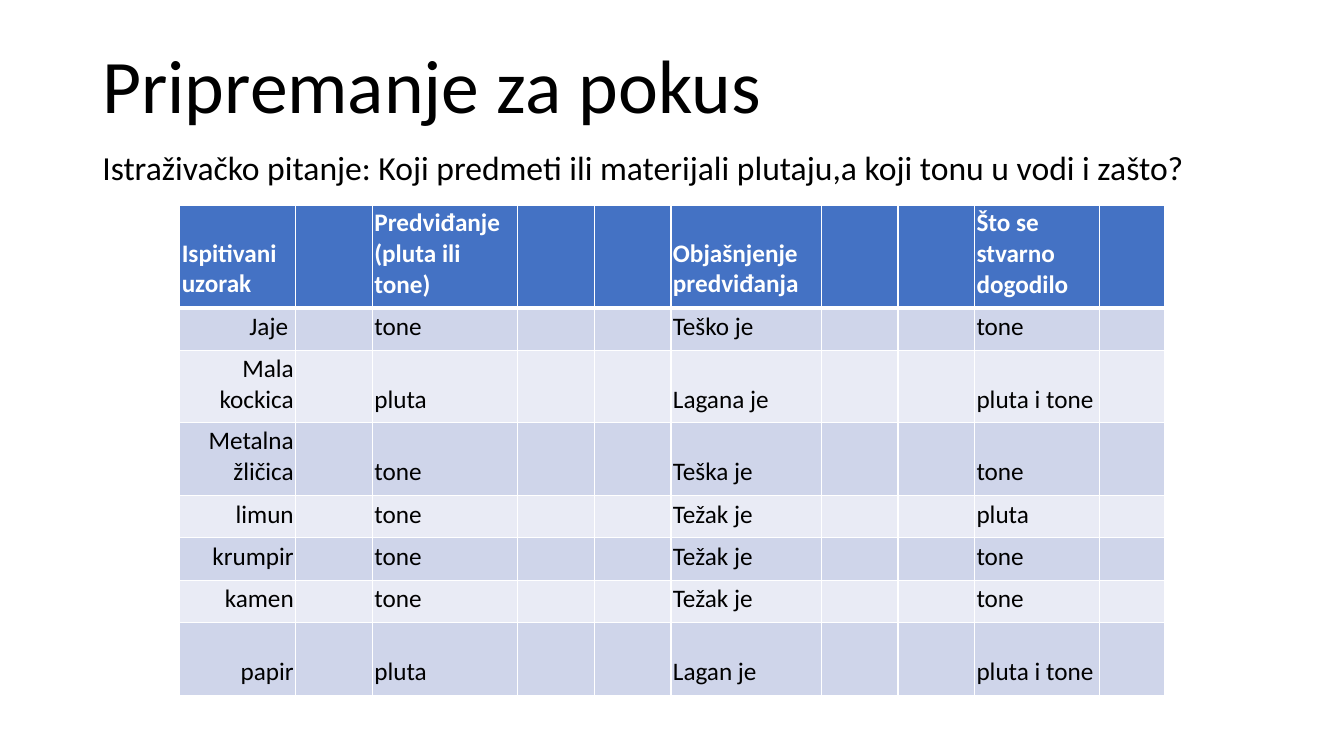
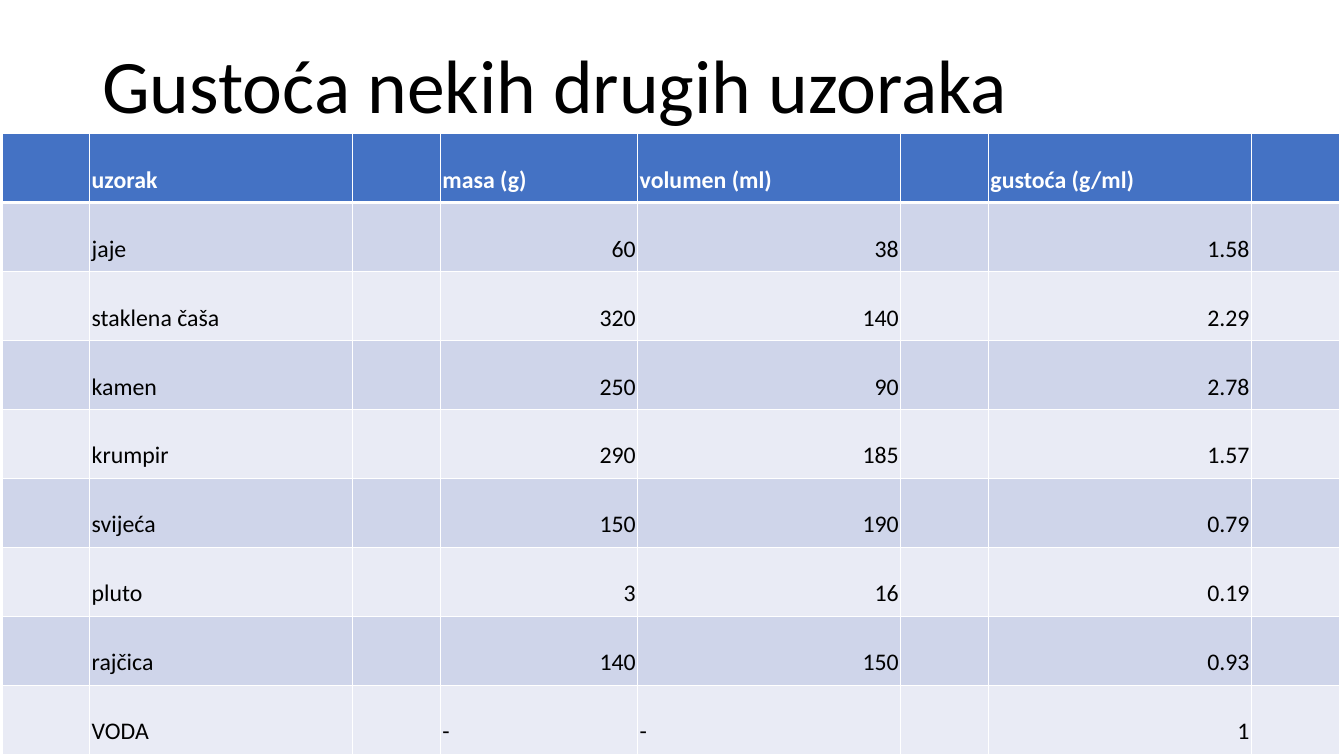
"""Builds two slides with tables about floating, sinking and density."""
import dataclasses
import typing

import lxml.etree
import pptx
import pptx.dml.color
import pptx.enum.text
import pptx.oxml.ns
import pptx.presentation
import pptx.slide
import pptx.table
import pptx.util

BLACK = pptx.dml.color.RGBColor(0x00, 0x00, 0x00)
WHITE = pptx.dml.color.RGBColor(0xFF, 0xFF, 0xFF)
HEADER_BLUE = pptx.dml.color.RGBColor(0x44, 0x72, 0xC4)
BAND_DARK = pptx.dml.color.RGBColor(0xCF, 0xD5, 0xEA)
BAND_LIGHT = pptx.dml.color.RGBColor(0xE9, 0xEB, 0xF5)

FONT = "Calibri"
SLIDE_WIDTH = pptx.util.Inches(13.33)
SLIDE_HEIGHT = pptx.util.Inches(7.5)
GRID_COLUMNS = 160
GRID_ROWS = 90
BLANK_LAYOUT = 6
CELL_INSET = pptx.util.Inches(0.02)
CELL_BOTTOM_INSET = pptx.util.Inches(0.08)
RULE = 1
HEADER_RULE = 3

LEFT = pptx.enum.text.PP_ALIGN.LEFT
RIGHT = pptx.enum.text.PP_ALIGN.RIGHT
TOP = pptx.enum.text.MSO_ANCHOR.TOP
BOTTOM = pptx.enum.text.MSO_ANCHOR.BOTTOM


class Area(typing.NamedTuple):
    """A rectangle in grid columns and rows."""
    column: float
    row: float
    columns: float
    rows: float

    def lengths(self) -> tuple[int, int, int, int]:
        """Return left, top, width and height in slide units."""
        across, down = SLIDE_WIDTH / GRID_COLUMNS, SLIDE_HEIGHT / GRID_ROWS
        return (int(self.column * across), int(self.row * down),
                int(self.columns * across), int(self.rows * down))


@dataclasses.dataclass(frozen=True)
class TextStyle:
    """The look of one run."""
    size: float
    color: pptx.dml.color.RGBColor = BLACK
    bold: bool = False


@dataclasses.dataclass(frozen=True)
class Heading:
    """A line of text above a table."""
    area: Area
    style: TextStyle
    anchor: pptx.enum.text.MSO_ANCHOR
    space_before: float = 0


@dataclasses.dataclass(frozen=True)
class Grid:
    """A banded table whose text stands in some of its columns."""
    area: Area
    column_shares: tuple[float, ...]
    row_shares: tuple[float, ...]
    text_columns: tuple[int, ...]
    right_columns: tuple[int, ...]
    size: float
    records: tuple[tuple[str, ...], ...]


TITLE = Heading(Area(11, 3.84, 138, 12.24), TextStyle(54), BOTTOM)
QUESTION = Heading(Area(11, 17.5, 138, 5.5), TextStyle(24), TOP, 10)

PREDICTIONS = Grid(
    area=Area(21.4, 24.5, 117.2, 58.3),
    column_shares=(1.15, 0.76, 1.44, 0.76, 0.76, 1.49, 0.76, 0.76, 1.24, 0.64),
    row_shares=(1.01, 0.42, 0.72, 0.72, 0.42, 0.42, 0.42, 0.72),
    text_columns=(0, 2, 5, 8),
    right_columns=(0,),
    size=18,
    records=(
        ("Ispitivani uzorak", "Predviđanje (pluta ili tone)",
         "Objašnjenje predviđanja", "Što se stvarno dogodilo"),
        ("Jaje ", "tone", "Teško je", "tone"),
        ("Mala kockica", "pluta", "Lagana je", "pluta i tone"),
        ("Metalna žličica", "tone", "Teška je", "tone"),
        ("limun", "tone", "Težak je", "pluta"),
        ("krumpir", "tone", "Težak je", "tone"),
        ("kamen", "tone", "Težak je", "tone"),
        ("papir", "pluta", "Lagan je", "pluta i tone"),
    ),
)

DENSITIES = Grid(
    area=Area(0.24, 15.9, 159.2, 73.9),
    column_shares=(1, 3, 1, 2.25, 3, 1, 3, 1),
    row_shares=(1,) * 9,
    text_columns=(1, 3, 4, 6),
    right_columns=(3, 4, 6),
    size=17,
    records=(
        ("uzorak", "masa (g)", "volumen (ml)", "gustoća (g/ml)"),
        ("jaje", "60", "38", "1.58"),
        ("staklena čaša", "320", "140", "2.29"),
        ("kamen", "250", "90", "2.78"),
        ("krumpir", "290", "185", "1.57"),
        ("svijeća", "150", "190", "0.79"),
        ("pluto", "3", "16", "0.19"),
        ("rajčica", "140", "150", "0.93"),
        ("VODA", "-", "-", "1"),
    ),
)


def add_run(paragraph: typing.Any, words: str, style: TextStyle) -> None:
    """Add one styled run to a paragraph."""
    run = paragraph.add_run()
    run.text = words
    run.font.name = FONT
    run.font.size = pptx.util.Pt(style.size)
    run.font.bold = style.bold
    run.font.color.rgb = style.color


def add_heading(slide: pptx.slide.Slide, heading: Heading, words: str) -> None:
    """Place a heading on a slide."""
    frame = slide.shapes.add_textbox(*heading.area.lengths()).text_frame
    frame.word_wrap = True
    frame.vertical_anchor = heading.anchor
    paragraph = frame.paragraphs[0]
    paragraph.line_spacing = 0.9
    paragraph.space_before = pptx.util.Pt(heading.space_before)
    add_run(paragraph, words, heading.style)


def rule_cell(cell: pptx.table._Cell, top: float, bottom: float) -> None:
    """Draw the white borders of a cell."""
    properties = cell._tc.get_or_add_tcPr()
    qn = pptx.oxml.ns.qn
    for side, width in (("L", RULE), ("R", RULE), ("T", top), ("B", bottom)):
        line = lxml.etree.SubElement(
            properties, qn(f"a:ln{side}"), w=str(pptx.util.Pt(width)))
        fill = lxml.etree.SubElement(line, qn("a:solidFill"))
        lxml.etree.SubElement(fill, qn("a:srgbClr"), val=str(WHITE))


def fill_cell(cell: pptx.table._Cell, row: int) -> None:
    """Colour and rule a cell according to its row."""
    rule_cell(cell, HEADER_RULE if row == 1 else RULE,
              HEADER_RULE if row == 0 else RULE)
    cell.fill.solid()
    band = BAND_DARK if row % 2 else BAND_LIGHT
    cell.fill.fore_color.rgb = band if row else HEADER_BLUE


def write_cell(cell: pptx.table._Cell, words: str, style: TextStyle,
               alignment: pptx.enum.text.PP_ALIGN) -> None:
    """Write text at the foot of a cell."""
    cell.vertical_anchor = BOTTOM
    cell.margin_left = cell.margin_right = cell.margin_top = CELL_INSET
    cell.margin_bottom = CELL_BOTTOM_INSET
    paragraph = cell.text_frame.paragraphs[0]
    paragraph.alignment = alignment
    add_run(paragraph, words, style)


def share_out(parts: typing.Any, shares: tuple[float, ...], total: int,
              dimension: str) -> None:
    """Divide a length among table columns or rows."""
    for part, share in zip(parts, shares):
        setattr(part, dimension, int(total * share / sum(shares)))


def add_grid(slide: pptx.slide.Slide, grid: Grid) -> None:
    """Place a banded table on a slide."""
    left, top, width, height = grid.area.lengths()
    table = slide.shapes.add_table(
        len(grid.row_shares), len(grid.column_shares),
        left, top, width, height).table
    share_out(table.columns, grid.column_shares, width, "width")
    share_out(table.rows, grid.row_shares, height, "height")
    header = TextStyle(grid.size, WHITE, True)
    body = TextStyle(grid.size)
    for row, record in enumerate(grid.records):
        for column in range(len(grid.column_shares)):
            fill_cell(table.cell(row, column), row)
        for column, words in zip(grid.text_columns, record):
            to_right = row and column in grid.right_columns and words != "-"
            write_cell(table.cell(row, column), words,
                       body if row else header, RIGHT if to_right else LEFT)


def add_slide(deck: pptx.presentation.Presentation, title: str) -> pptx.slide.Slide:
    """Add a white slide with a title."""
    slide = deck.slides.add_slide(deck.slide_layouts[BLANK_LAYOUT])
    slide.background.fill.solid()
    slide.background.fill.fore_color.rgb = WHITE
    add_heading(slide, TITLE, title)
    return slide


def main() -> None:
    """Build and save the presentation."""
    deck = pptx.Presentation()
    deck.slide_width, deck.slide_height = SLIDE_WIDTH, SLIDE_HEIGHT

    preparation = add_slide(deck, "Pripremanje za pokus")
    add_heading(preparation, QUESTION,
                "Istraživačko pitanje: Koji predmeti ili materijali plutaju,"
                "a koji tonu u vodi i zašto?")
    add_grid(preparation, PREDICTIONS)

    density = add_slide(deck, "Gustoća nekih drugih uzoraka")
    add_grid(density, DENSITIES)

    deck.save("out.pptx")


if __name__ == "__main__":
    main()
